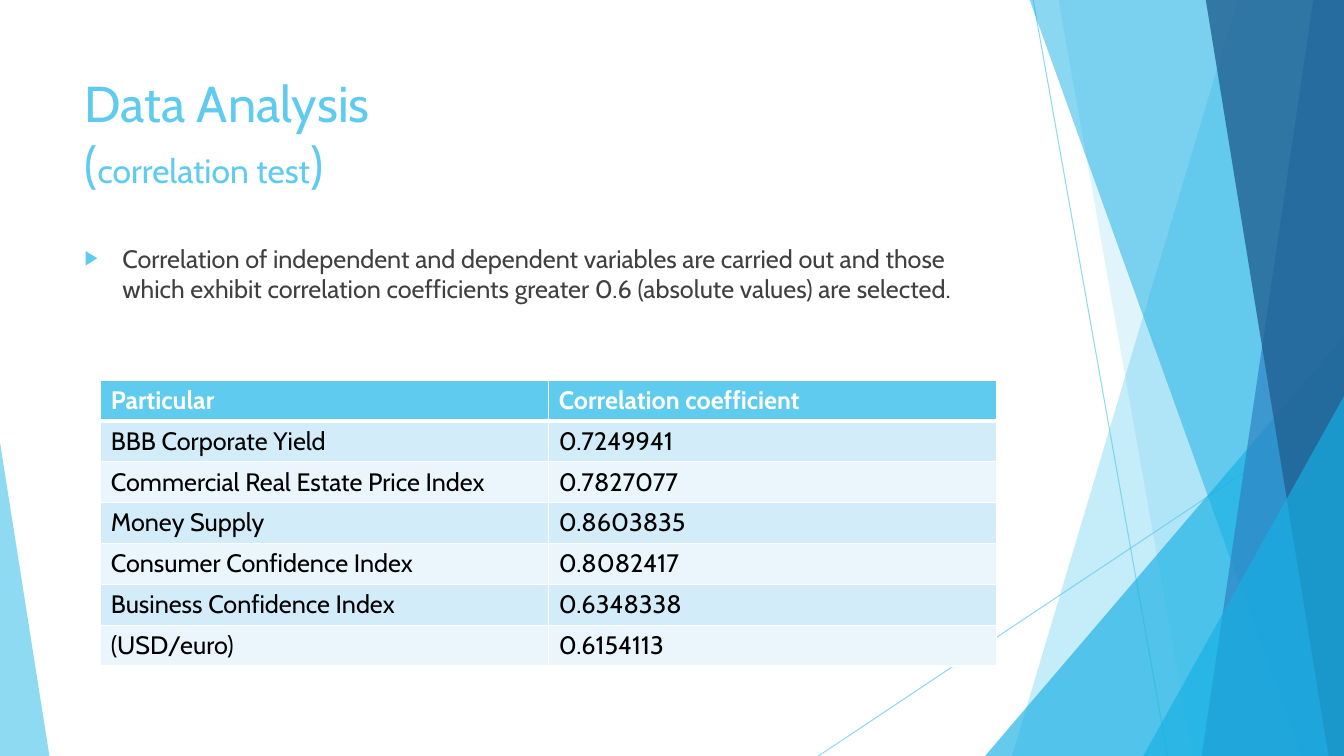
import dataclasses

import lxml.etree
import pptx
import pptx.dml.color
import pptx.enum.shapes
import pptx.enum.text
import pptx.oxml.ns
import pptx.util

Pt = pptx.util.Pt
qn = pptx.oxml.ns.qn
WIDE, HIGH = 960, 540


@dataclasses.dataclass(frozen=True)
class Theme:
    font: str = "Cabin"
    sky: str = "5FCBEF"
    cyan: str = "17B0E4"
    blue: str = "2E83C3"
    navy: str = "226292"
    ink: str = "404040"
    black: str = "000000"
    white: str = "FFFFFF"
    bands: tuple = ("EAF6FC", "D2ECF9")
    title: int = 36
    sub: int = 24
    text: int = 18


def tint(code):
    return pptx.dml.color.RGBColor.from_string(code)


def add(parent, tag, **attrs):
    return lxml.etree.SubElement(parent, qn(tag), attrs)


class Deck:
    def __init__(self, theme):
        self.theme = theme
        self.show = pptx.Presentation()
        self.show.slide_width, self.show.slide_height = Pt(WIDE), Pt(HIGH)
        self.slide = self.show.slides.add_slide(self.show.slide_layouts[6])

    def fade(self, shape, alpha):
        for color in shape.element.spPr.iter(qn("a:srgbClr")):
            add(color, "a:alpha", val=str(alpha * 1000))

    def paint(self, shape, color, alpha):
        shape.shadow.inherit = False
        shape.fill.solid()
        shape.fill.fore_color.rgb = tint(color)
        shape.line.fill.background()
        self.fade(shape, alpha)

    def line(self, start, end, color, alpha):
        kind = pptx.enum.shapes.MSO_CONNECTOR.STRAIGHT
        line = self.slide.shapes.add_connector(kind, *map(Pt, start + end))
        line.line.color.rgb = tint(color)
        line.line.width = Pt(0.75)
        self.fade(line, alpha)
        add(line.element.spPr, "a:effectLst")

    def wedge(self, top, base, color, alpha):
        """Fill from a slanted left edge to the right side of the slide."""
        build = self.slide.shapes.build_freeform(Pt(top), Pt(-0.6))
        build.add_line_segments(
            [(Pt(x), Pt(y)) for x, y in ((WIDE, -0.6), (WIDE, HIGH), (base, HIGH))])
        self.paint(build.convert_to_shape(), color, alpha)

    def peak(self, left, top, width, tip, color, alpha):
        """Stand a triangle on the bottom edge of the slide."""
        kind = pptx.enum.shapes.MSO_SHAPE.ISOSCELES_TRIANGLE
        peak = self.slide.shapes.add_shape(
            kind, *map(Pt, (left, top, width, HIGH - top)))
        peak.adjustments[0] = tip
        self.paint(peak, color, alpha)

    def text(self, para, words, color, size, bold=False):
        run = para.add_run()
        run.text = words
        style = {"name": self.theme.font, "size": Pt(size), "bold": bold}
        for key, value in style.items():
            setattr(run.font, key, value)
        run.font.color.rgb = tint(color)

    def box(self, *place):
        frame = self.slide.shapes.add_textbox(*map(Pt, place)).text_frame
        frame.word_wrap = True
        frame.vertical_anchor = pptx.enum.text.MSO_ANCHOR.TOP
        return frame.paragraphs[0]

    def bullet(self, para, mark, color):
        para.space_before = Pt(10)
        props = para._p.get_or_add_pPr()
        props.set("marL", str(Pt(27)))
        props.set("indent", str(Pt(-27)))
        add(add(props, "a:buClr"), "a:srgbClr", val=color)
        add(props, "a:buSzPct", val="80000")
        add(props, "a:buFont", typeface="Arial")
        add(props, "a:buChar", char=mark)

    def edge(self, cell, row):
        props = cell._tc.get_or_add_tcPr()
        heavy = {"T": row == 1, "B": row == 0}
        for side in "LRTB":
            width = Pt(3 if heavy.get(side) else 1)
            rule = add(props, f"a:ln{side}", w=str(width))
            add(add(rule, "a:solidFill"), "a:srgbClr", val=self.theme.white)

    def table(self, rows, left, top, width, pitch):
        theme = self.theme
        grid = self.slide.shapes.add_table(
            len(rows), len(rows[0]),
            *map(Pt, (left, top, width, pitch * len(rows)))).table
        for r, row in enumerate(rows):
            for c, words in enumerate(row):
                cell = grid.cell(r, c)
                head = r == 0
                self.edge(cell, r)
                cell.fill.solid()
                cell.fill.fore_color.rgb = tint(
                    theme.sky if head else theme.bands[r % 2])
                self.text(cell.text_frame.paragraphs[0], words,
                          theme.white if head else theme.black,
                          theme.text, head)


def main():
    theme = Theme()
    deck = Deck(theme)

    # Slanted panes along the right and left sides
    deck.line((738, 0), (834, HIGH), theme.sky, 70)
    deck.line((WIDE, 290), (584.6, HIGH), theme.sky, 70)
    deck.wedge(884.2, 722.9, theme.sky, 36)
    deck.wedge(756, 851.8, theme.sky, 20)
    deck.peak(703.6, 240, 256.4, 1, theme.cyan, 66)
    deck.wedge(735.3, 929.5, theme.cyan, 50)
    deck.wedge(938.2, 858.4, theme.blue, 70)
    deck.wedge(861.2, 949, theme.navy, 80)
    deck.peak(816.6, 283, 143.4, 1, theme.cyan, 66)
    deck.peak(0, 316, 35.3, 0, theme.sky, 70)

    # Title
    title = deck.box(53.3, 48, 677, 104)
    deck.text(title, "Data Analysis", theme.sky, theme.title)
    title.add_line_break()
    for words, size in (("(", theme.title), ("correlation test", theme.sub),
                        (")", theme.title)):
        deck.text(title, words, theme.sky, size)

    # Body
    body = deck.box(53.3, 170, 677, 305)
    deck.bullet(body, "▶", theme.sky)
    deck.text(body, "Correlation of independent and dependent variables are "
              "carried out and those which exhibit correlation coefficients "
              "greater 0.6 (absolute values) are selected.",
              theme.ink, theme.text)

    # Table of results
    deck.table((
        ("Particular", "Correlation coefficient"),
        ("BBB Corporate Yield", "0.7249941"),
        ("Commercial Real Estate Price Index", "0.7827077"),
        ("Money Supply", "0.8603835"),
        ("Consumer Confidence Index", "0.8082417"),
        ("Business Confidence Index", "0.6348338"),
        ("(USD/euro)", "0.6154113"),
    ), 72, 271.4, 640, 29.2)

    deck.show.save("out.pptx")


if __name__ == "__main__":
    main()
